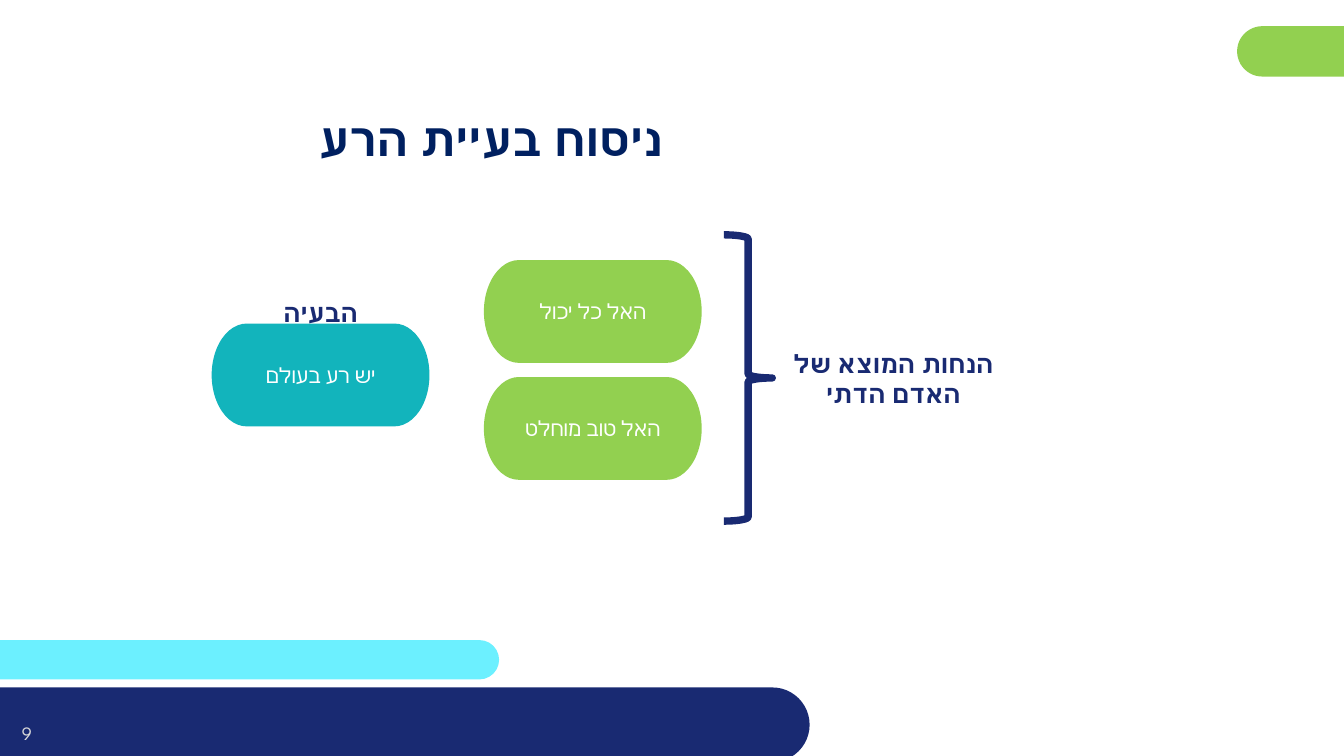
from dataclasses import dataclass

from lxml.etree import SubElement
from pptx import Presentation
from pptx.dml.color import RGBColor
from pptx.enum.shapes import MSO_SHAPE as Shape
from pptx.enum.text import MSO_ANCHOR as Anchor, MSO_AUTO_SIZE as AutoSize, PP_ALIGN as Align
from pptx.oxml.ns import qn
from pptx.util import Inches, Pt


@dataclass(frozen=True)
class Theme:
    font: str = "League Spartan"
    navy: str = "192A72"
    title_blue: str = "002060"
    green: str = "92D050"
    teal: str = "12B4BC"
    cyan: str = "6CF0FF"
    white: str = "FFFFFF"
    grey: str = "D9D9D9"
    title_size: float = 33
    label_size: float = 18
    card_size: float = 15
    number_size: float = 13.5
    brace_width: float = 5.25


THEME = Theme()


def inches(box):
    return [Inches(value) for value in box]


def write(shape, text, size, color, bold=False, rtl=True, anchor=Anchor.MIDDLE, **frame_format):
    frame = shape.text_frame
    settings = {"word_wrap": True, "auto_size": AutoSize.NONE, "vertical_anchor": anchor}
    for name, value in {**settings, **frame_format}.items():
        setattr(frame, name, value)
    para = frame.paragraphs[0]
    para.alignment = Align.CENTER
    if rtl:
        para._p.get_or_add_pPr().set("rtl", "1")
    span = para.add_run()
    span.text = text
    for name, value in {"size": Pt(size), "bold": bold, "name": THEME.font}.items():
        setattr(span.font, name, value)
    span.font.color.rgb = RGBColor.from_string(color)
    # Hebrew letters take the complex-script typeface.
    SubElement(span._r.get_or_add_rPr(), qn("a:cs"), typeface=THEME.font)


def add_filled(page, kind, box, color):
    shape = page.shapes.add_shape(kind, *inches(box))
    shape.shadow.inherit = False
    shape.fill.solid()
    shape.fill.fore_color.rgb = RGBColor.from_string(color)
    shape.line.fill.background()
    return shape


def add_label(page, box, text):
    write(page.shapes.add_textbox(*inches(box)), text, THEME.label_size, THEME.navy,
          bold=True, anchor=Anchor.TOP)


def add_card(page, box, text, color):
    card = add_filled(page, Shape.FLOWCHART_TERMINATOR, box, color)
    write(card, text, THEME.card_size, THEME.white)


def add_decoration(page, number):
    """Draw the rounded bars that run off the edges, and the page number."""
    bars = [
        ((-0.26, 6.35, 5.21, 0.39), THEME.cyan),
        ((12.27, 0.26, 1.87, 0.5), THEME.green),
        ((-0.42, 6.82, 8.45, 0.74), THEME.navy),
    ]
    for box, color in bars:
        add_filled(page, Shape.ROUNDED_RECTANGLE, box, color).adjustments[0] = 0.5
    number_box = page.shapes.add_textbox(*inches((-0.18, 6.99, 0.89, 0.57)))
    write(number_box, number, THEME.number_size, THEME.grey, rtl=False)


def add_title(page, box, text):
    title = page.shapes.title
    for name, value in zip(("left", "top", "width", "height"), inches(box)):
        setattr(title, name, value)
    write(title, text, THEME.title_size, THEME.title_blue, bold=True,
          margin_left=Inches(0.04), margin_right=Inches(0.04), margin_top=0, margin_bottom=0)


def add_premises(page, box, label, premises):
    """Stack the premise cards, with a brace to their right that leads to the label."""
    left, top, width, height = box
    card_width, card_height, pitch = 2.16, 1.02, 1.16
    for row, premise in enumerate(premises):
        card_box = (left, top + 0.25 + row * pitch, card_width, card_height)
        add_card(page, card_box, premise, THEME.green)
    brace_box = (left + 2.38, top, 0.48, height)
    brace = page.shapes.add_shape(Shape.RIGHT_BRACE, *inches(brace_box))
    brace.shadow.inherit = False
    brace.fill.background()
    brace.line.color.rgb = RGBColor.from_string(THEME.navy)
    brace.line.width = Pt(THEME.brace_width)
    label_width, label_height = 2.38, 0.71
    add_label(page, (left + width - label_width, top + (height - label_height) / 2 + 0.01,
                     label_width, label_height), label)


def add_problem(page, box, label, text):
    """Place the problem card at the foot of the box, under its heading."""
    left, top, width, height = box
    card_width, card_height = 2.16, 1.02
    add_card(page, (left + (width - card_width) / 2, top + height - card_height,
                    card_width, card_height), text, THEME.teal)
    add_label(page, (left, top, width, 0.4), label)


def main():
    deck = Presentation()
    deck.slide_width, deck.slide_height = Inches(13.33), Inches(7.5)
    page = deck.slides.add_slide(deck.slide_layouts.get_by_name("Title Only"))
    add_decoration(page, "9")
    add_title(page, (0.85, 1.07, 8.04, 0.59), "ניסוח בעיית הרע")
    add_premises(page, (4.8, 2.33, 5.25, 2.84), "הנחות המוצא של האדם הדתי",
                 ["האל כל יכול", "האל טוב מוחלט"])
    add_problem(page, (1.99, 2.9, 2.38, 1.33), "הבעיה", "יש רע בעולם")
    deck.save("out.pptx")


if __name__ == "__main__":
    main()
